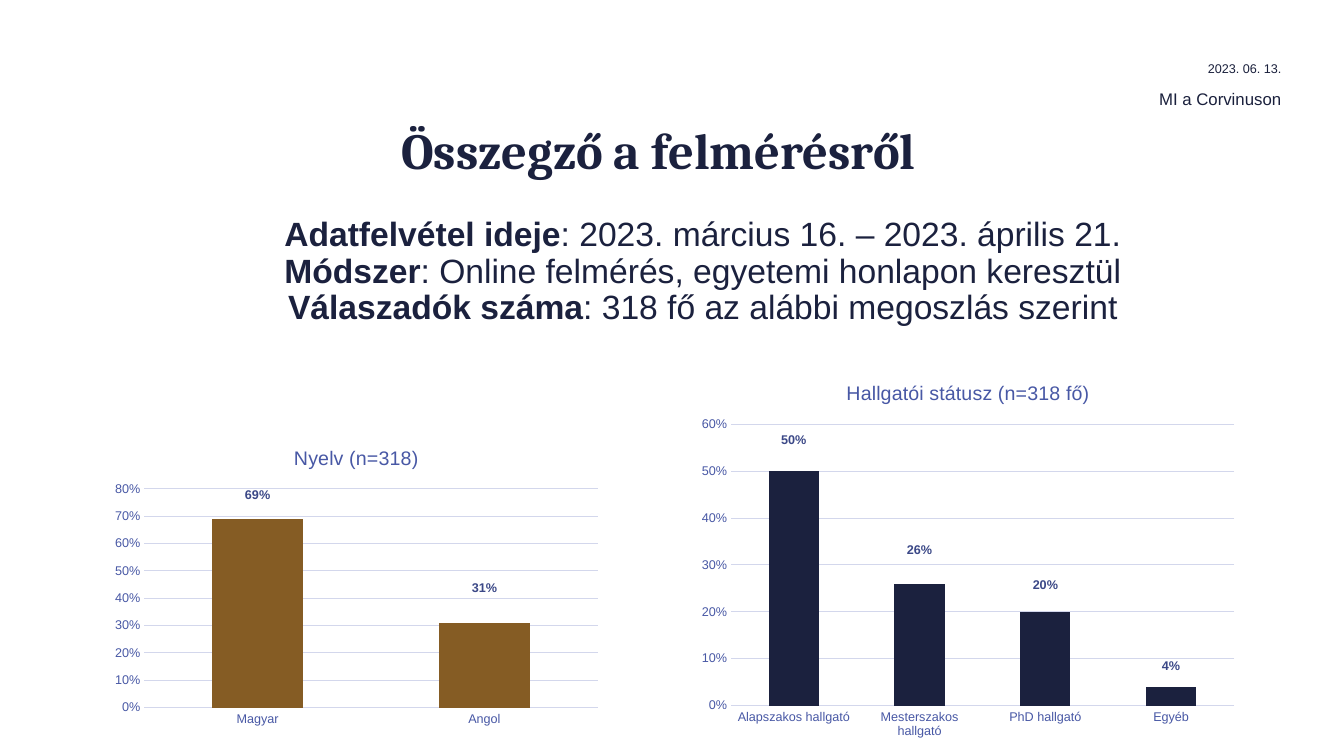
import dataclasses
import typing

import pptx
import pptx.chart.data
import pptx.dml.color
import pptx.enum.chart
import pptx.enum.text
import pptx.oxml
import pptx.oxml.ns
import pptx.util

PX = 9144
INK = {"text": "1A203C", "navy": "1B213E", "gold": "855C24",
       "axis": "4858A5", "label": "3B4887", "grid": "D3D7EC"}
ALIGN = pptx.enum.text.PP_ALIGN
ANCHOR = pptx.enum.text.MSO_ANCHOR
Box = tuple[int, int, int, int]


@dataclasses.dataclass
class Note:
    text: str
    box: Box
    size: int
    anchor: typing.Any


@dataclasses.dataclass
class Bars:
    title: str
    box: Box
    plot: Box
    head: tuple[int, int]
    top: float
    color: str
    edge: bool
    names: list[str]
    shares: list[float]
    lifts: list[int]


NOTES = [
    Note("2023. 06. 13.", (971, 60, 300, 20), 9, ANCHOR.TOP),
    Note("MI a Corvinuson", (695, 68, 576, 40), 12, ANCHOR.BOTTOM),
]
FACTS = [
    ("Adatfelvétel ideje", ": 2023. március 16. – 2023. április 21."),
    ("Módszer", ": Online felmérés, egyetemi honlapon keresztül"),
    ("Válaszadók száma", ": 318 fő az alábbi megoszlás szerint"),
]
CHARTS = [
    Bars("Nyelv (n=318)", (104, 427, 500, 300), (39, 58, 450, 217), (184, 11),
         0.8, "gold", True, ["Magyar", "Angol"], [0.69, 0.31], [117, 76]),
    Bars("Hallgatói státusz (n=318 fő)", (686, 362, 550, 379),
         (39, 59, 499, 279), (150, 12), 0.6, "navy", False,
         ["Alapszakos hallgató", "Mesterszakos hallgató", "PhD hallgató", "Egyéb"],
         [0.5, 0.26, 0.2, 0.04], [147, 94, 73, 30]),
]


def style(font: typing.Any, size: int, color: str, bold: bool | None = False,
          face: str = "Arial") -> None:
    font.name, font.size, font.bold = face, pptx.util.Pt(size), bold
    font.color.rgb = pptx.dml.color.RGBColor.from_string(INK[color])


def place(shape: typing.Any, box: Box, anchor: typing.Any) -> typing.Any:
    shape.left, shape.top, shape.width, shape.height = (n * PX for n in box)
    frame = shape.text_frame
    frame.word_wrap = True
    frame.auto_size = pptx.enum.text.MSO_AUTO_SIZE.NONE
    frame.vertical_anchor = anchor
    frame.margin_left = frame.margin_right = 0
    frame.margin_top = frame.margin_bottom = 0
    return frame


def draw_note(slide: typing.Any, note: Note) -> None:
    shape = slide.shapes.add_textbox(0, 0, PX, PX)
    line = place(shape, note.box, note.anchor).paragraphs[0]
    line.text, line.alignment = note.text, ALIGN.RIGHT
    style(line.font, note.size, "text")


def draw_facts(shape: typing.Any) -> None:
    frame = place(shape, (197, 216, 1000, 112), ANCHOR.TOP)
    for spot, (name, value) in enumerate(FACTS):
        line = frame.add_paragraph() if spot else frame.paragraphs[0]
        props = line._p.get_or_add_pPr()
        props.set("marL", "0")
        props.set("indent", "0")
        props.append(pptx.oxml.parse_xml(
            f'<a:buNone {pptx.oxml.ns.nsdecls("a")}/>'))
        line.alignment, line.line_spacing = ALIGN.CENTER, 0.9
        line.space_before = pptx.util.Pt(0)
        style(line.font, 24, "navy", None)
        for text, bold in ((name, True), (value, False)):
            run = line.add_run()
            run.text, run.font.bold = text, bold


def set_layout(node: typing.Any, spot: int, box: tuple[int, ...],
               whole: Box, mode: str = "") -> None:
    for old in node.findall(pptx.oxml.ns.qn("c:layout")):
        node.remove(old)
    modes = f'<c:xMode val="{mode}"/><c:yMode val="{mode}"/>' if mode else ""
    inner = '<c:layoutTarget val="inner"/>' if len(box) == 4 else ""
    parts = "".join(f'<c:{key} val="{part / whole[2 + n % 2]:.4f}"/>'
                    for n, (key, part) in enumerate(zip("xywh", box)))
    node.insert(spot, pptx.oxml.parse_xml(
        f'<c:layout {pptx.oxml.ns.nsdecls("c")}><c:manualLayout>'
        f'{inner}{modes}{parts}</c:manualLayout></c:layout>'))


def hide_leads(root: typing.Any) -> None:
    for old in root.xpath(".//c:showLeaderLines"):
        old.getparent().remove(old)
    for labels in root.xpath(".//c:dLbls"):
        labels.append(pptx.oxml.parse_xml(
            f'<c:showLeaderLines {pptx.oxml.ns.nsdecls("c")} val="0"/>'))


def rule(line: typing.Any) -> None:
    line.color.rgb = pptx.dml.color.RGBColor.from_string(INK["grid"])
    line.width = pptx.util.Pt(0.75)


def draw_chart(slide: typing.Any, bars: Bars) -> None:
    data = pptx.chart.data.CategoryChartData(number_format="0%")
    data.categories = bars.names
    data.add_series("Series 1", bars.shares)
    kind = pptx.enum.chart.XL_CHART_TYPE.COLUMN_STACKED
    chart = slide.shapes.add_chart(kind, *(n * PX for n in bars.box), data).chart
    style(chart.font, 10, "navy")
    chart.has_legend = False
    head = chart.chart_title.text_frame.paragraphs[0]
    head.text = bars.title
    style(head.font, 14, "axis")

    names, scale = chart.category_axis, chart.value_axis
    for axis in (names, scale):
        axis.major_tick_mark = pptx.enum.chart.XL_TICK_MARK.NONE
        axis.minor_tick_mark = pptx.enum.chart.XL_TICK_MARK.NONE
        axis.format.line.fill.background()
        style(axis.tick_labels.font, 9, "axis")
    if bars.edge:
        rule(names.format.line)
    scale.minimum_scale, scale.maximum_scale = 0, bars.top
    scale.major_unit = 0.1
    scale.tick_labels.number_format = "0%"
    scale.tick_labels.number_format_is_linked = False
    rule(scale.major_gridlines.format.line)

    plot = chart.plots[0]
    plot.gap_width, plot.overlap, plot.vary_by_categories = 150, 100, False
    series = plot.series[0]
    series.format.fill.solid()
    series.format.fill.fore_color.rgb = pptx.dml.color.RGBColor.from_string(
        INK[bars.color])
    labels = series.data_labels
    labels.show_value = True
    labels.number_format, labels.number_format_is_linked = "0%", False
    style(labels.font, 9, "label", True)
    for spot in range(len(bars.lifts)):
        style(series.points[spot].data_label.font, 9, "label", True)

    root = chart._chartSpace
    hide_leads(root)
    for node, lift in zip(root.xpath(".//c:dLbl"), bars.lifts):
        set_layout(node, 1, (0, -lift), bars.box)
    set_layout(root.xpath(".//c:plotArea")[0], 0, bars.plot, bars.box, "edge")
    set_layout(root.xpath("c:chart/c:title")[0], 1, bars.head, bars.box, "edge")


def main() -> None:
    deck = pptx.Presentation()
    deck.slide_width, deck.slide_height = 1333 * PX, 750 * PX
    slide = deck.slides.add_slide(deck.slide_layouts[1])
    title = place(slide.shapes.title, (153, 118, 1000, 65), ANCHOR.TOP)
    title.text = "Összegző a felmérésről"
    title.paragraphs[0].alignment = ALIGN.CENTER
    style(title.paragraphs[0].font, 36, "navy", True, "Cambria")
    draw_facts(slide.placeholders[1])
    for note in NOTES:
        draw_note(slide, note)
    for bars in CHARTS:
        draw_chart(slide, bars)
    deck.save("out.pptx")


if __name__ == "__main__":
    main()
